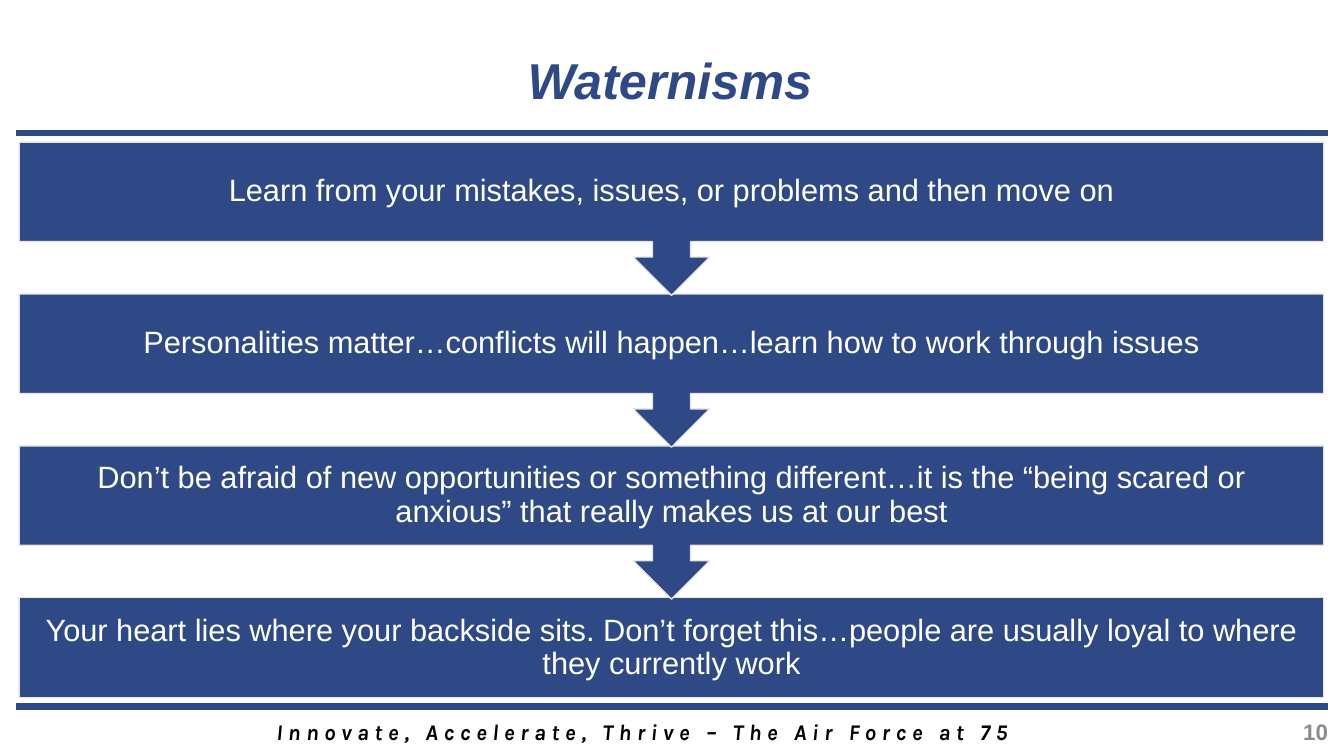
from lxml import etree
from pptx import Presentation
from pptx.dml.color import RGBColor
from pptx.enum.shapes import MSO_CONNECTOR, MSO_SHAPE
from pptx.enum.text import MSO_ANCHOR, PP_ALIGN
from pptx.oxml.ns import qn
from pptx.util import Inches, Pt

STRAIGHT = MSO_CONNECTOR.STRAIGHT
RECTANGLE = MSO_SHAPE.RECTANGLE
ARROW_CALLOUT = MSO_SHAPE.DOWN_ARROW_CALLOUT
MIDDLE = MSO_ANCHOR.MIDDLE
CENTER = PP_ALIGN.CENTER
RIGHT = PP_ALIGN.RIGHT

NAVY = RGBColor(0x2E, 0x49, 0x86)
PALE = RGBColor(0xE7, 0xE6, 0xE6)
GRAY = RGBColor(0x8C, 0x8C, 0x8C)
BLACK = RGBColor(0, 0, 0)
WHITE = RGBColor(0xFF, 0xFF, 0xFF)

STEP_LEFT, STEP_WIDTH = 1.43, 97.07
FIRST_TOP, STEP_PITCH = 18.8, 20.09
CALLOUT_HEIGHT, BOX_HEIGHT = 20.27, 13.2
FOOTER_TOP, FOOTER_HEIGHT = 94.93, 3.6

STEPS = [
    "Learn from your mistakes, issues, or problems and then move on",
    "Personalities matter…conflicts will happen…learn how to work through issues",
    "Don’t be afraid of new opportunities or something different…it is the “being scared or anxious” that really makes us at our best",
    "Your heart lies where your backside sits. Don’t forget this…people are usually loyal to where they currently work",
]


class SlideBuilder:
    font_name = "Arial"

    def __init__(self, presentation):
        self.width = presentation.slide_width
        self.height = presentation.slide_height
        self.slide = presentation.slides.add_slide(presentation.slide_layouts[6])

    def place(self, left, top, width, height):
        return (
            round(self.width * left / 100),
            round(self.height * top / 100),
            round(self.width * width / 100),
            round(self.height * height / 100),
        )

    def set_text(self, shape, text, size, color, margins, align=CENTER,
                 bold=False, italic=False, font_name=None, wrap=True, line_spacing=0.9):
        frame = shape.text_frame
        frame.word_wrap = wrap
        frame.vertical_anchor = MIDDLE
        frame.margin_left = frame.margin_right = Inches(margins[0])
        frame.margin_top = frame.margin_bottom = Inches(margins[1])
        paragraph = frame.paragraphs[0]
        paragraph.text = text
        paragraph.alignment = align
        paragraph.line_spacing = line_spacing
        font = paragraph.font
        font.name = font_name or self.font_name
        font.size = Pt(size)
        font.bold = bold
        font.italic = italic
        font.color.rgb = color
        return paragraph

    def rule(self, top):
        left, y, width, _ = self.place(1.2, top, 97.6, 0)
        line = self.slide.shapes.add_connector(STRAIGHT, left, y, left + width, y)
        line.line.color.rgb = NAVY
        line.line.width = Pt(4.5)
        etree.SubElement(line._element.spPr, qn("a:effectLst"))

    def label(self, box, text, size, color, **style):
        shape = self.slide.shapes.add_textbox(*self.place(*box))
        return self.set_text(shape, text, size, color, (0.1, 0), bold=True, **style)

    def step(self, kind, top, height, text):
        shape = self.slide.shapes.add_shape(
            kind, *self.place(STEP_LEFT, top, STEP_WIDTH, height))
        shape.shadow.inherit = False
        shape.fill.solid()
        shape.fill.fore_color.rgb = NAVY
        shape.line.color.rgb = PALE
        shape.line.width = Pt(1)
        self.set_text(shape, text, 22, WHITE, (0.17, 0.17))


def main():
    presentation = Presentation()
    presentation.slide_width = Inches(13.33)
    presentation.slide_height = Inches(7.5)
    builder = SlideBuilder(presentation)

    for rule_top in (17.6, 93.47):
        builder.rule(rule_top)

    builder.label((9.9, 5.87, 79.9, 10.27), "Waternisms", 36, NAVY, italic=True)
    tagline = builder.label(
        (19.05, FOOTER_TOP, 57.54, FOOTER_HEIGHT),
        "Innovate, Accelerate, Thrive – The Air Force at 75", 16, BLACK,
        italic=True, font_name="Karla", wrap=False, line_spacing=1.0)
    tagline.runs[0]._r.get_or_add_rPr().set("spc", "400")
    builder.label((95.2, FOOTER_TOP, 4.35, FOOTER_HEIGHT), "10", 16, GRAY,
                  align=RIGHT, wrap=False, line_spacing=1.0)

    last = len(STEPS) - 1
    for index in range(last, -1, -1):
        top = FIRST_TOP + index * STEP_PITCH
        if index == last:
            builder.step(RECTANGLE, top, BOX_HEIGHT, STEPS[index])
        else:
            builder.step(ARROW_CALLOUT, top, CALLOUT_HEIGHT, STEPS[index])

    presentation.save("out.pptx")


if __name__ == "__main__":
    main()
